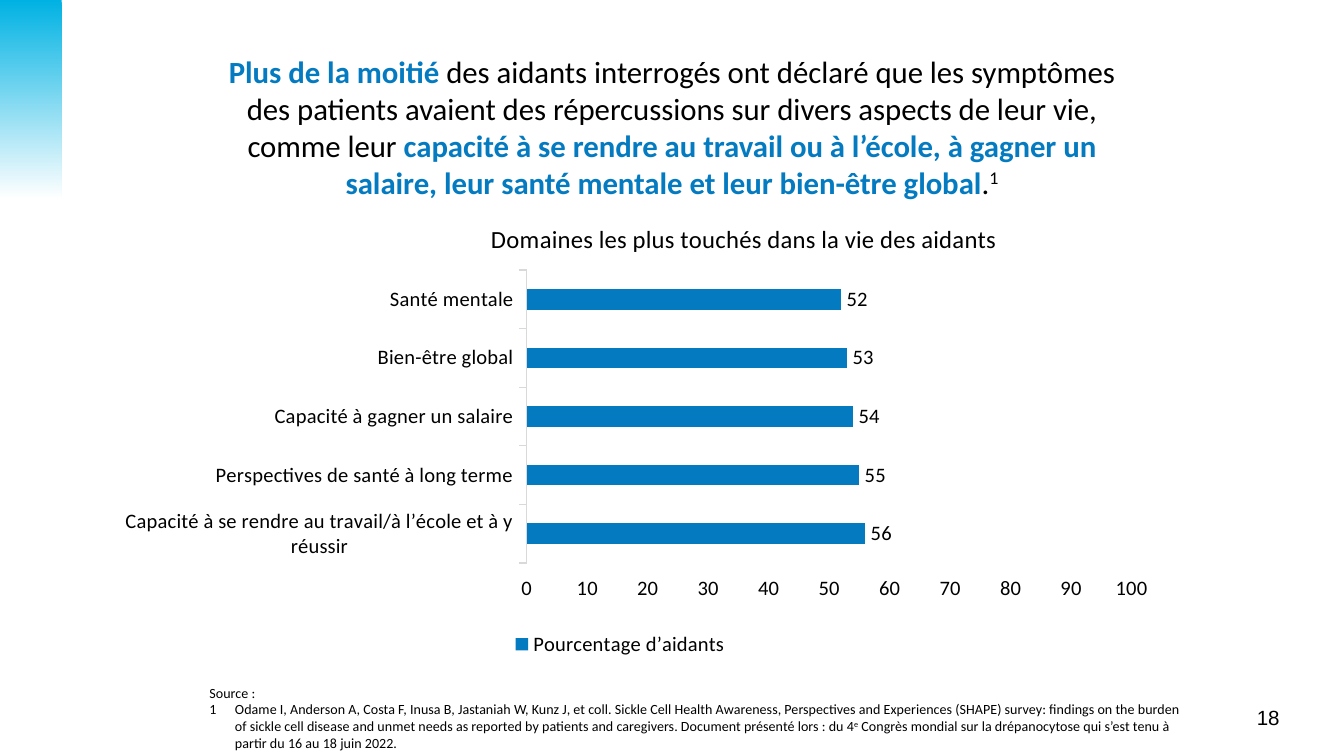
from dataclasses import dataclass

from lxml.etree import SubElement
from pptx import Presentation
from pptx.chart.data import CategoryChartData
from pptx.dml.color import RGBColor
from pptx.enum.chart import XL_CHART_TYPE, XL_LABEL_POSITION, XL_LEGEND_POSITION, XL_TICK_MARK
from pptx.enum.shapes import MSO_SHAPE
from pptx.enum.text import MSO_ANCHOR, PP_ALIGN
from pptx.oxml.ns import qn
from pptx.util import Inches, Pt


@dataclass(frozen=True)
class Theme:
    blue: str = "047BC1"
    cyan: str = "00B2E3"
    black: str = "000000"
    white: str = "FFFFFF"
    axis: str = "D9D9D9"
    body_font: str = "Calibri"
    number_font: str = "Arial"
    heading: float = 16.5
    chart_title: float = 13.2
    label: float = 11
    note: float = 7.5


THEME = Theme()

# Content: each span is (text, style)
HEADING = [
    ("Plus de la moitié ", "strong"),
    ("des aidants interrogés ont déclaré que les symptômes des patients avaient "
     "des répercussions sur divers aspects de leur vie, comme leur ", "plain"),
    ("capacité à se rendre au travail ou à l’école, à gagner un salaire, "
     "leur santé mentale et leur bien-être global", "strong"),
    (".", "plain"),
    ("1", "super"),
]
SOURCE_LABEL = [("Source :", "plain")]
SOURCE = [
    ("Odame I, Anderson A, Costa F, Inusa B, Jastaniah W, Kunz J, et coll. Sickle Cell "
     "Health Awareness, Perspectives and Experiences (SHAPE) survey: findings on the burden "
     "of sickle cell disease and unmet needs as reported by patients and caregivers. "
     "Document présenté lors : du 4", "plain"),
    ("e", "super"),
    (" Congrès mondial sur la drépanocytose qui s’est tenu à partir du 16 au "
     "18 juin 2022.", "plain"),
]
PAGE_NUMBER = [("18", "plain")]
CHART_TITLE = "Domaines les plus touchés dans la vie des aidants"
SERIES_NAME = "Pourcentage d’aidants"
IMPACTS = [
    ("Capacité à se rendre au travail/à l’école et à y réussir", 56),
    ("Perspectives de santé à long terme", 55),
    ("Capacité à gagner un salaire", 54),
    ("Bien-être global", 53),
    ("Santé mentale", 52),
]
CHART_WIDTH, CHART_HEIGHT = 8.02, 3.4


def color(code):
    return RGBColor.from_string(code)


def style_font(font, size, name=THEME.body_font, code=THEME.black, bold=False):
    font.size, font.name, font.bold = Pt(size), name, bold
    font.color.rgb = color(code)


def add_spans(para, spans, size, name=THEME.body_font):
    for text, style in spans:
        span = para.add_run()
        span.text = text
        strong = style == "strong"
        style_font(span.font, size, name, THEME.blue if strong else THEME.black, strong)
        if style == "super":
            span.font._element.set("baseline", "30000")


def add_box(page, left, top, width, height):
    box = page.shapes.add_textbox(*map(Inches, (left, top, width, height)))
    box.text_frame.word_wrap = True
    return box.text_frame


def number_paragraph(para, indent):
    properties = para._p.get_or_add_pPr()
    properties.set("marL", str(Inches(indent)))
    properties.set("indent", str(-Inches(indent)))
    SubElement(properties, qn("a:buFont"), typeface=THEME.body_font)
    SubElement(properties, qn("a:buAutoNum"), type="arabicPlain")


def place(parent, before, left, top, width=None, height=None, inner=False):
    """Fix a chart part at inches within the chart; its layout precedes a given child."""
    layout = parent.find(qn("c:layout"))
    if layout is None:
        layout = SubElement(parent, qn("c:layout"))
        follower = parent.find(qn(before))
        if follower is not None:
            follower.addprevious(layout)
    for old in list(layout):
        layout.remove(old)
    manual = SubElement(layout, qn("c:manualLayout"))
    if inner:
        SubElement(manual, qn("c:layoutTarget"), val="inner")
    for key in ("x", "y"):
        SubElement(manual, qn(f"c:{key}Mode"), val="edge")
    sizes = (CHART_WIDTH, CHART_HEIGHT) * 2
    for key, length, size in zip("xywh", (left, top, width, height), sizes):
        if length is not None:
            SubElement(manual, qn(f"c:{key}"), val=str(length / size))


def add_impact_chart(page):
    data = CategoryChartData(number_format="General")
    data.categories = [name for name, _ in IMPACTS]
    data.add_series(SERIES_NAME, [value for _, value in IMPACTS])
    chart = page.shapes.add_chart(
        XL_CHART_TYPE.BAR_CLUSTERED,
        *map(Inches, (0.6, 1.53, CHART_WIDTH, CHART_HEIGHT)), data).chart
    style_font(chart.font, THEME.label)

    # Title and legend
    chart.has_title = True
    title = chart.chart_title
    title.text_frame.text = CHART_TITLE
    style_font(title.text_frame.paragraphs[0].runs[0].font, THEME.chart_title)
    title.include_in_layout = False
    place(title._element, "c:overlay", 3.02, 0.09)
    chart.has_legend = True
    legend = chart.legend
    legend.position = XL_LEGEND_POSITION.BOTTOM
    legend.include_in_layout = False
    style_font(legend.font, THEME.label)
    place(legend._element, "c:overlay", 2.81, 3.13, 2.41, 0.27)

    # Axes
    categories, values = chart.category_axis, chart.value_axis
    for axis in (categories, values):
        axis.has_major_gridlines = False
        axis.major_tick_mark = XL_TICK_MARK.OUTSIDE
        axis.minor_tick_mark = XL_TICK_MARK.NONE
        style_font(axis.tick_labels.font, THEME.label)
    categories.format.line.color.rgb = color(THEME.axis)
    categories.format.line.width = Pt(0.75)
    values.format.line.fill.background()
    values.minimum_scale, values.maximum_scale, values.major_unit = 0, 100, 10

    # Bars and value labels
    plot = chart.plots[0]
    plot.gap_width, plot.vary_by_categories = 182, False
    bars = plot.series[0]
    bars.format.fill.solid()
    bars.format.fill.fore_color.rgb = color(THEME.blue)
    labels = bars.data_labels
    labels.show_value = True
    labels.position = XL_LABEL_POSITION.OUTSIDE_END
    style_font(labels.font, THEME.label)
    place(plot._element.getparent(), "c:barChart", 3.32, 0.48, 4.5, 2.18, inner=True)


# Widescreen page, 16:9
deck = Presentation()
deck.slide_width = Inches(10)
deck.slide_height = Inches(10 * 9 / 16)
page = deck.slides.add_slide(deck.slide_layouts[6])

# Page number
frame = add_box(page, 8.45, 5.19, 1.17, 0.29)
frame.vertical_anchor = MSO_ANCHOR.MIDDLE
frame.paragraphs[0].alignment = PP_ALIGN.RIGHT
add_spans(frame.paragraphs[0], PAGE_NUMBER, THEME.label, THEME.number_font)

# Corner band fading downwards
band = page.shapes.add_shape(MSO_SHAPE.RECTANGLE, 0, 0, Inches(0.46), Inches(1.48))
band.shadow.inherit = False
band.line.fill.background()
band.fill.gradient()
band.fill.gradient_angle = 270
for stop, code in zip(band.fill.gradient_stops, (THEME.cyan, THEME.white)):
    stop.color.rgb = color(code)

# Heading
frame = add_box(page, 1.54, 0.35, 6.92, 1.19)
frame.margin_left = frame.margin_right = Inches(0.07)
frame.margin_top = frame.margin_bottom = Inches(0.04)
frame.paragraphs[0].alignment = PP_ALIGN.CENTER
add_spans(frame.paragraphs[0], HEADING, THEME.heading)

# Source note
frame = add_box(page, 1.46, 5.04, 7.45, 0.48)
add_spans(frame.paragraphs[0], SOURCE_LABEL, THEME.note)
reference = frame.add_paragraph()
number_paragraph(reference, 0.19)
add_spans(reference, SOURCE, THEME.note)

add_impact_chart(page)

deck.save("out.pptx")
